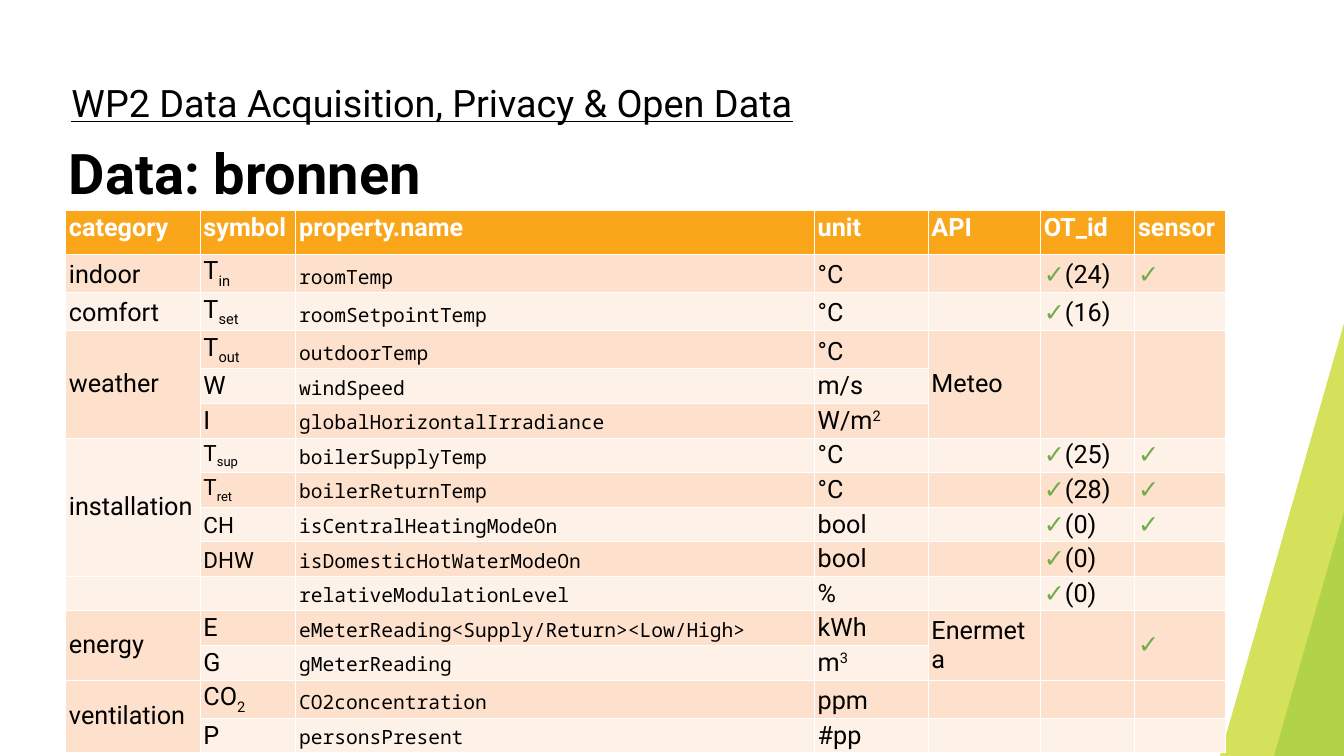
from dataclasses import dataclass

from pptx import Presentation
from pptx.dml.color import RGBColor
from pptx.enum.shapes import MSO_SHAPE
from pptx.enum.text import MSO_ANCHOR
from pptx.util import Inches, Pt


@dataclass(frozen=True)
class Theme:
    sans: str = "Roboto"
    mono: str = "Noto Sans Mono"
    ink: str = "000000"
    header_ink: str = "FFFFFF"
    check: str = "70AD47"
    header: str = "FAA61A"
    bands: tuple = ("FEF1E8", "FDE1CD")
    lime: str = "D5E05B"
    green: str = "B1D249"
    title_size: int = 80
    topic_size: int = 54
    cell_size: int = 36
    compact_size: int = 32
    code_size: int = 28


THEME = Theme()
SLIDE_WIDTH, SLIDE_HEIGHT = Inches(26.67), Inches(15)
HEADER_HEIGHT, ROW_HEIGHT = 5.73, 3.6
COLUMN_WIDTHS = (10.01, 7.12, 38.58, 8.47, 8.36, 7.01, 6.75)
SYMBOL, PROPERTY, UNIT = 1, 2, 3
COMPACT_ROWS = range(6, 10)
BASELINES = {"_": "-25000", "^": "30000"}

HEADINGS = ("category", "symbol", "property.name", "unit", "API", "OT_id", "sensor")
# None continues the cell above; _ starts a subscript and ^ a superscript.
SOURCES = (
    ("indoor", "T_in", "roomTemp", "°C", "", "✓(24)", "✓"),
    ("comfort", "T_set", "roomSetpointTemp", "°C", "", "✓(16)", ""),
    ("weather", "T_out", "outdoorTemp", "°C", "Meteo", "", ""),
    (None, "W", "windSpeed", "m/s", None, None, None),
    (None, "I", "globalHorizontalIrradiance", "W/m^2", None, None, None),
    ("installation", "T_sup", "boilerSupplyTemp", "°C", "", "✓(25)", "✓"),
    (None, "T_ret", "boilerReturnTemp", "°C", "", "✓(28)", "✓"),
    (None, "CH", "isCentralHeatingModeOn", "bool", "", "✓(0)", "✓"),
    (None, "DHW", "isDomesticHotWaterModeOn", "bool", "", "✓(0)", ""),
    ("", "", "relativeModulationLevel", "%", "", "✓(0)", ""),
    ("energy", "E", "eMeterReading<Supply/Return><Low/High>", "kWh", "Enermeta", "", "✓"),
    (None, "G", "gMeterReading", "m^3", None, None, None),
    ("ventilation", "CO_2", "CO2concentration", "ppm", "", "", ""),
    (None, "P", "personsPresent", "#pp", "", "", ""),
)


def across(percent):
    return round(SLIDE_WIDTH * percent / 100)


def down(percent):
    return round(SLIDE_HEIGHT * percent / 100)


def place(left, top, width, height):
    """Turn percentages of the slide into a position and size."""
    return across(left), down(top), across(width), down(height)


def apply_format(target, values):
    for attribute, value in values.items():
        setattr(target, attribute, value)


def add_run(paragraph, text, color=THEME.ink, **font_values):
    run = paragraph.add_run()
    run.text = text
    apply_format(run.font, {"name": THEME.sans, "size": Pt(THEME.cell_size), **font_values})
    run.font.color.rgb = RGBColor.from_string(color)
    return run


def add_slanted_bar(slide, area, color):
    bar = slide.shapes.add_shape(MSO_SHAPE.RECTANGLE, *place(*area))
    bar.rotation = 16
    bar.shadow.inherit = False
    bar.fill.solid()
    bar.fill.fore_color.rgb = RGBColor.from_string(color)
    bar.line.fill.background()


def add_heading(slide, area, text, spacing, side_margin, **font_values):
    frame = slide.shapes.add_textbox(*place(*area)).text_frame
    apply_format(frame, {"word_wrap": True, "margin_left": side_margin,
                         "margin_right": side_margin, "margin_top": Inches(0.1)})
    paragraph = frame.paragraphs[0]
    paragraph.line_spacing = spacing
    add_run(paragraph, text, **font_values)


def write_scripted(paragraph, text, **font_values):
    """Write text whose part after _ or ^ is lowered or raised."""
    mark = next((m for m in BASELINES if m in text), None)
    base, _, script = text.partition(mark) if mark else (text, "", "")
    add_run(paragraph, base, **font_values)
    if script:
        run = add_run(paragraph, script, **font_values)
        run.font._element.set("baseline", BASELINES[mark])


def write_source_cell(paragraph, text, row, column):
    if column == PROPERTY:
        add_run(paragraph, text, name=THEME.mono, size=Pt(THEME.code_size))
    elif column == SYMBOL and row in COMPACT_ROWS:
        write_scripted(paragraph, text, size=Pt(THEME.compact_size))
    elif column in (SYMBOL, UNIT):
        write_scripted(paragraph, text)
    elif text.startswith("✓"):
        add_run(paragraph, "✓", THEME.check)
        if text[1:]:
            add_run(paragraph, text[1:])
    else:
        add_run(paragraph, text)


def format_cell(cell, color, anchor):
    apply_format(cell, {"margin_left": Inches(0.07), "margin_right": Inches(0.07),
                        "vertical_anchor": anchor})
    cell.fill.solid()
    cell.fill.fore_color.rgb = RGBColor.from_string(color)


def rows_spanned(row, column):
    """Count the rows that a cell covers, itself included."""
    end = row + 1
    while end <= len(SOURCES) and SOURCES[end - 1][column] is None:
        end += 1
    return end - row


def add_source_table(slide):
    height = HEADER_HEIGHT + ROW_HEIGHT * len(SOURCES)
    area = place(4.87, 27.87, sum(COLUMN_WIDTHS), height)
    table = slide.shapes.add_table(len(SOURCES) + 1, len(HEADINGS), *area).table
    for column, width in zip(table.columns, COLUMN_WIDTHS):
        column.width = across(width)
    for index, row in enumerate(table.rows):
        row.height = down(ROW_HEIGHT if index else HEADER_HEIGHT)

    for column, heading in enumerate(HEADINGS):
        cell = table.cell(0, column)
        format_cell(cell, THEME.header, MSO_ANCHOR.TOP)
        add_run(cell.text_frame.paragraphs[0], heading, THEME.header_ink, bold=True)

    for row, source in enumerate(SOURCES, start=1):
        for column, text in enumerate(source):
            if text is None:
                continue
            cell = table.cell(row, column)
            span = rows_spanned(row, column)
            if span > 1:
                cell.merge(table.cell(row + span - 1, column))
            anchor = MSO_ANCHOR.MIDDLE if span > 1 else MSO_ANCHOR.BOTTOM
            format_cell(cell, THEME.bands[row % 2], anchor)
            if text:
                write_source_cell(cell.text_frame.paragraphs[0], text, row, column)


def main():
    presentation = Presentation()
    apply_format(presentation, {"slide_width": SLIDE_WIDTH, "slide_height": SLIDE_HEIGHT})
    slide = presentation.slides.add_slide(presentation.slide_layouts[6])

    add_slanted_bar(slide, (95.61, 36.13, 5.21, 69.07), THEME.lime)
    add_slanted_bar(slide, (97.68, 60.73, 6.71, 44.4), THEME.green)
    add_source_table(slide)
    add_heading(slide, (4.95, 10.6, 86.24, 6.93), "WP2 Data Acquisition, Privacy & Open Data",
                0.9, Inches(0.1), size=Pt(THEME.topic_size), underline=True)
    add_heading(slide, (4.87, 18.2, 86.31, 19.33), "Data: bronnen",
                Pt(90), Inches(0.07), size=Pt(THEME.title_size), bold=True)
    presentation.save("out.pptx")


if __name__ == "__main__":
    main()
